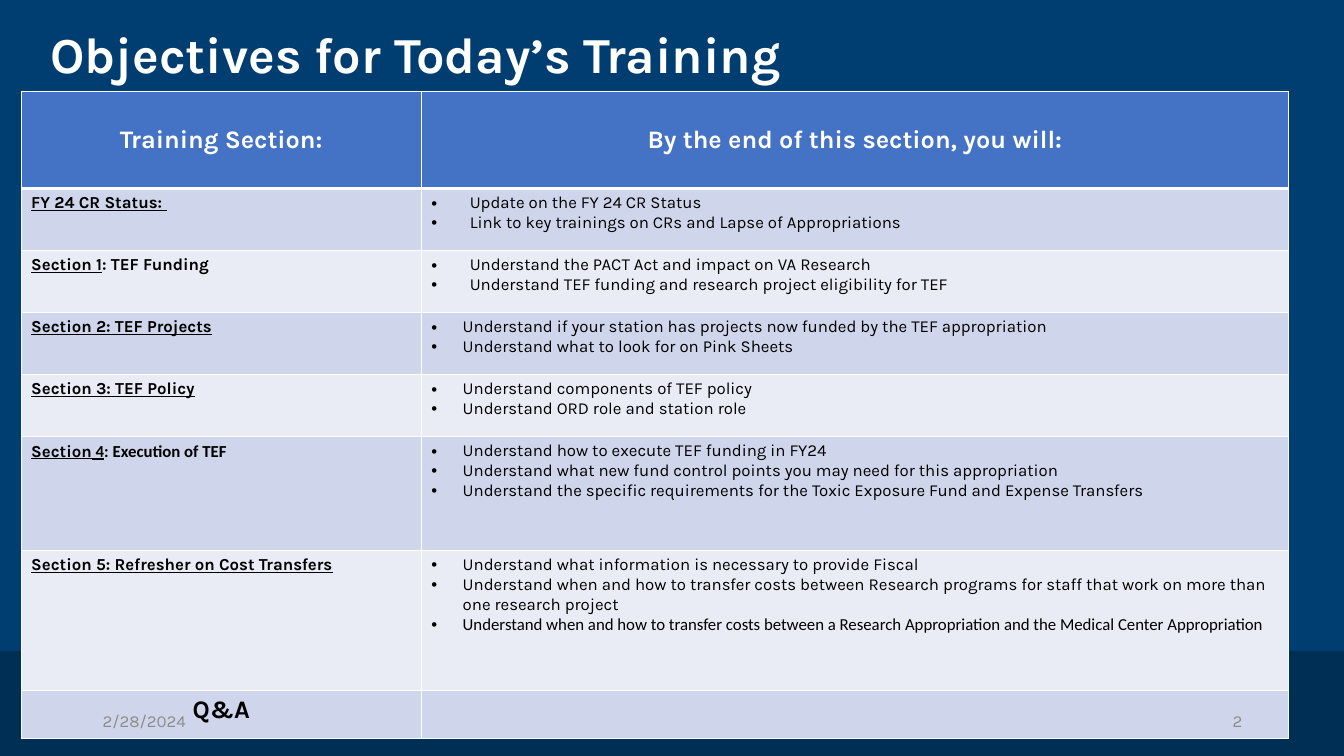
from lxml import etree
from pptx import Presentation
from pptx.dml.color import RGBColor
from pptx.enum import shapes, text
from pptx.oxml import ns
from pptx.util import Inches, Pt

COLORS = {
    "background": "003E72", "footer": "002F56", "header": "4472C4",
    "band_dark": "CFD5EA", "band_light": "E9EBF5",
    "white": "FFFFFF", "black": "000000", "muted": "8C8C8C",
}
COLUMN_WIDTHS = [3.97, 8.6]
HEADINGS = ["Training Section:", "By the end of this section, you will:"]
HEADER_HEIGHT = 0.96

# Row height, bullet indent, label runs as (words, format), objectives as (words, font)
SECTIONS = [
    (0.615, 0.38, [("FY 24 CR Status: ", {"underline": True})],
     [("Update on the FY 24 CR Status", "Karla"),
      ("Link to key trainings on CRs and Lapse of Appropriations", "Karla")]),
    (0.615, 0.38, [("Section 1", {"underline": True}), (": TEF Funding", {})],
     [("Understand the PACT Act and impact on VA Research", "Karla"),
      ("Understand TEF funding and research project eligibility for TEF", "Karla")]),
    (0.615, 0.31, [("Section 2: TEF Projects", {"underline": True})],
     [("Understand if your station has projects now funded by the TEF appropriation", "Karla"),
      ("Understand what to look for on Pink Sheets", "Karla")]),
    (0.615, 0.31, [("Section 3: TEF Policy", {"underline": True})],
     [("Understand components of TEF policy", "Karla"),
      ("Understand ORD role and station role", "Karla")]),
    (1.13, 0.31, [("Section", {"underline": True}),
                  (" 4", {"underline": True, "font": "Calibri"}),
                  (": Execution of TEF", {"font": "Calibri"})],
     [("Understand how to execute TEF funding in FY24", "Karla"),
      ("Understand what new fund control points you may need for this appropriation", "Karla"),
      ("Understand the specific requirements for the Toxic Exposure Fund and Expense Transfers",
       "Karla")]),
    (1.39, 0.31, [("Section 5: Refresher on Cost Transfers", {"underline": True})],
     [("Understand what information is necessary to provide Fiscal", "Karla"),
      ("Understand when and how to transfer costs between Research programs for staff "
       "that work on more than one research project", "Karla"),
      ("Understand when and how to transfer costs between a Research Appropriation "
       "and the Medical Center Appropriation", "Calibri")]),
    (0.48, 0, [("Q&A", {"size": 18})], []),
]


def rgb(name):
    return RGBColor.from_string(COLORS[name])


def write(paragraph, words, size=12, font="Karla", color="black", bold=False,
          underline=False, align=None):
    run = paragraph.add_run()
    run.text = words
    run.font.size = Pt(size)
    run.font.name = font
    run.font.bold = bold
    run.font.underline = underline
    run.font.color.rgb = rgb(color)
    if align is not None:
        paragraph.alignment = align


def add_bullet(paragraph, indent):
    properties = paragraph._p.get_or_add_pPr()
    properties.set("marL", str(Inches(indent)))
    properties.set("indent", str(-Inches(indent)))
    etree.SubElement(properties, ns.qn("a:buFont"), typeface="Arial")
    etree.SubElement(properties, ns.qn("a:buChar"), char="•")


def style_cell(cell, fill, top=1, bottom=1):
    """Fill a cell and draw its white borders; top and bottom are widths in points."""
    cell.fill.solid()
    cell.fill.fore_color.rgb = rgb(fill)
    properties = cell._tc.get_or_add_tcPr()
    borders = {"lnL": 1, "lnR": 1, "lnT": top, "lnB": bottom}
    for position, (side, width) in enumerate(borders.items()):
        line = etree.Element(ns.qn(f"a:{side}"), w=str(Pt(width)))
        solid = etree.SubElement(line, ns.qn("a:solidFill"))
        etree.SubElement(solid, ns.qn("a:srgbClr"), val=COLORS["white"])
        properties.insert(position, line)


def add_label(slide, left, top, width, height, words, anchor, **style):
    frame = slide.shapes.add_textbox(
        Inches(left), Inches(top), Inches(width), Inches(height)).text_frame
    frame.word_wrap = True
    frame.vertical_anchor = anchor
    write(frame.paragraphs[0], words, **style)
    return frame


def add_backdrop(slide, left, top, width, height):
    slide.background.fill.solid()
    slide.background.fill.fore_color.rgb = rgb("background")
    footer = slide.shapes.add_shape(shapes.MSO_SHAPE.RECTANGLE, Inches(left), Inches(top),
                                    Inches(width), Inches(height))
    footer.shadow.inherit = False
    footer.fill.solid()
    footer.fill.fore_color.rgb = rgb("footer")
    footer.line.fill.background()


def add_title(slide, left, top, width, height):
    frame = add_label(slide, left, top, width, height, "Objectives for Today’s Training",
                      text.MSO_ANCHOR.TOP, size=36, color="white", bold=True)
    frame.paragraphs[0].line_spacing = 0.9


def add_objectives(slide, left, top):
    heights = [HEADER_HEIGHT] + [section[0] for section in SECTIONS]
    table = slide.shapes.add_table(
        len(heights), len(COLUMN_WIDTHS), Inches(left), Inches(top),
        Inches(sum(COLUMN_WIDTHS)), Inches(sum(heights))).table
    for column, width in zip(table.columns, COLUMN_WIDTHS):
        column.width = Inches(width)
    for row, height in zip(table.rows, heights):
        row.height = Inches(height)

    for cell, heading in zip(table.rows[0].cells, HEADINGS):
        style_cell(cell, "header", bottom=3)
        cell.vertical_anchor = text.MSO_ANCHOR.MIDDLE
        write(cell.text_frame.paragraphs[0], heading, size=18, color="white", bold=True,
              align=text.PP_ALIGN.CENTER)

    for number, (_, indent, label, objectives) in enumerate(SECTIONS, start=1):
        label_cell, objectives_cell = table.rows[number].cells
        for cell in (label_cell, objectives_cell):
            style_cell(cell, "band_dark" if number % 2 else "band_light",
                       top=3 if number == 1 else 1)
        align = text.PP_ALIGN.LEFT if objectives else text.PP_ALIGN.CENTER
        for words, style in label:
            write(label_cell.text_frame.paragraphs[0], words, bold=True, align=align, **style)
        frame = objectives_cell.text_frame
        for position, (words, font) in enumerate(objectives):
            paragraph = frame.add_paragraph() if position else frame.paragraphs[0]
            add_bullet(paragraph, indent)
            write(paragraph, words, font=font)


def add_footer(slide, top, width, height):
    for left, words, align in ((9.42, "2", text.PP_ALIGN.RIGHT),
                               (0.92, "2/28/2024", text.PP_ALIGN.LEFT)):
        add_label(slide, left, top, width, height, words, text.MSO_ANCHOR.MIDDLE,
                  color="muted", align=align)


def main():
    deck = Presentation()
    deck.slide_width, deck.slide_height = Inches(13.33), Inches(7.5)
    slide = deck.slides.add_slide(deck.slide_layouts[6])
    add_backdrop(slide, 0, 6.46, 13.33, 1.04)
    add_title(slide, 0.4, 0.25, 9.48, 0.82)
    add_objectives(slide, 0.21, 0.91)
    add_footer(slide, 6.95, 3, 0.4)
    deck.save("out.pptx")


if __name__ == "__main__":
    main()
